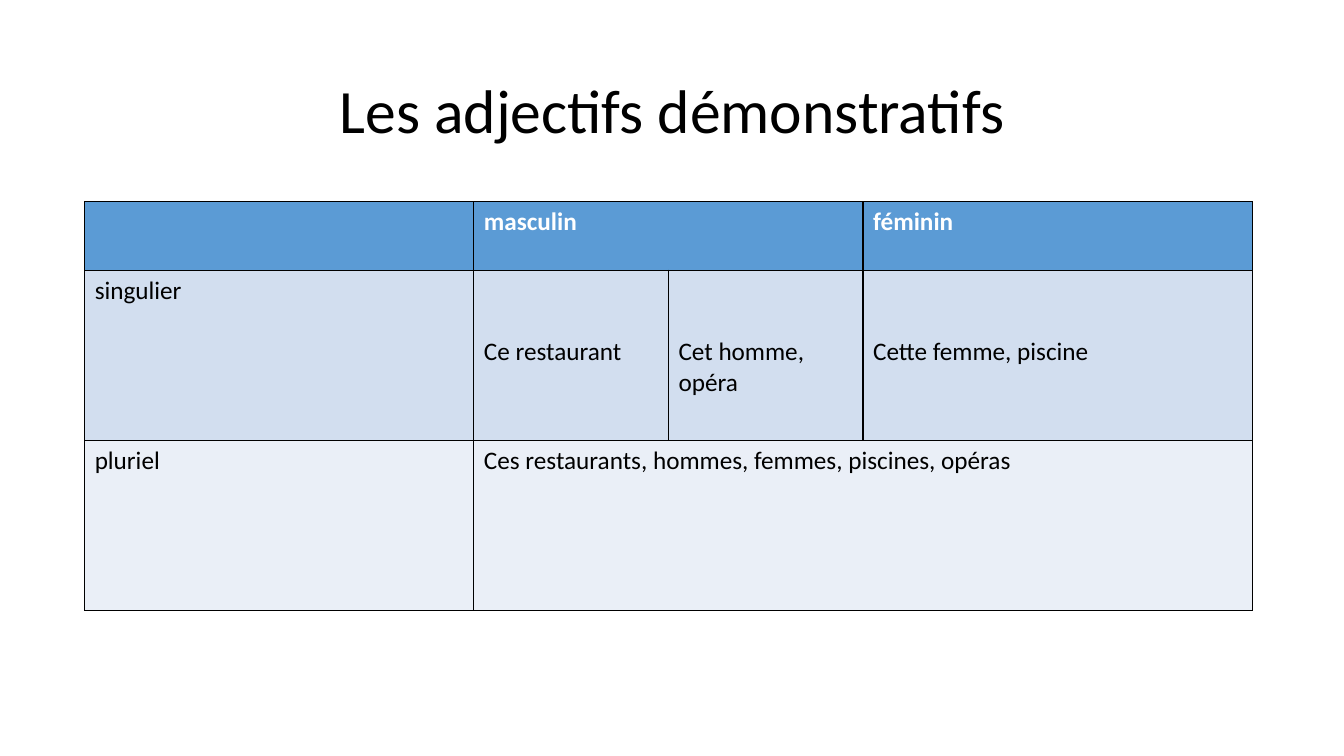
from dataclasses import dataclass

from lxml.etree import SubElement
from pptx import Presentation
from pptx.dml.color import RGBColor
from pptx.enum.text import MSO_ANCHOR, PP_ALIGN
from pptx.oxml.ns import qn
from pptx.util import Inches, Pt


@dataclass(frozen=True)
class Theme:
    font: str = "Calibri"
    title_size: int = 44
    body_size: int = 18
    ink: str = "000000"
    header_ink: str = "FFFFFF"
    row_fills: tuple = ("5B9BD5", "D2DEEF", "EAEFF7")
    border_points: float = 1


class GrammarSlide:
    """Draw themed elements on one slide, with lengths as shares of its size."""

    def __init__(self, deck, theme):
        self.deck = deck
        self.theme = theme
        self.page = deck.slides.add_slide(deck.slide_layouts[6])

    def across(self, share):
        return round(self.deck.slide_width * share / 100)

    def down(self, share):
        return round(self.deck.slide_height * share / 100)

    def frame(self, left, top, width, height):
        return self.across(left), self.down(top), self.across(width), self.down(height)

    def add_span(self, para, text, size, color, bold=False):
        span = para.add_run()
        span.text = text
        span.font.name = self.theme.font
        span.font.size = Pt(size)
        span.font.bold = bold
        span.font.color.rgb = RGBColor.from_string(color)

    def title(self, text, *place):
        box = self.page.shapes.add_textbox(*self.frame(*place))
        box.text_frame.word_wrap = True
        box.text_frame.vertical_anchor = MSO_ANCHOR.MIDDLE
        para = box.text_frame.paragraphs[0]
        para.alignment = PP_ALIGN.CENTER
        para.line_spacing = 0.9
        self.add_span(para, text, self.theme.title_size, self.theme.ink)

    def border(self, cell):
        properties = cell._tc.get_or_add_tcPr()
        for side in ("lnL", "lnR", "lnT", "lnB"):
            line = SubElement(properties, qn(f"a:{side}"), w=str(int(Pt(self.theme.border_points))))
            fill = SubElement(line, qn("a:solidFill"))
            SubElement(fill, qn("a:srgbClr"), val=self.theme.ink)

    def table(self, place, column_shares, row_shares, merges, texts, lowered):
        grid = self.page.shapes.add_table(
            len(row_shares), len(column_shares), *self.frame(*place)).table
        grid.first_row = grid.horz_banding = False
        for column, share in zip(grid.columns, column_shares):
            column.width = self.across(share)
        for row, share in zip(grid.rows, row_shares):
            row.height = self.down(share)
        for row, first, last in merges:
            grid.cell(row, first).merge(grid.cell(row, last))
        for row, fill in enumerate(self.theme.row_fills):
            for column in range(len(column_shares)):
                cell = grid.cell(row, column)
                self.border(cell)
                cell.fill.solid()
                cell.fill.fore_color.rgb = RGBColor.from_string(fill)
        for (row, column), text in texts.items():
            cell = grid.cell(row, column)
            header = row == 0
            color = self.theme.header_ink if header else self.theme.ink
            self.add_span(cell.text_frame.paragraphs[0], text, self.theme.body_size, color, header)
            if (row, column) in lowered:
                cell.margin_top = self.down(8.8)


def main():
    deck = Presentation()
    deck.slide_width, deck.slide_height = Inches(13.33), Inches(7.5)
    slide = GrammarSlide(deck, Theme())
    slide.title("Les adjectifs démonstratifs", 6.9, 5.33, 86.27, 19.33)
    unit = 14.48
    rows = (9.07, 22.53, 22.53)
    slide.table(
        place=(6.3, 26.67, 6 * unit, sum(rows)),
        column_shares=(2 * unit, unit, unit, 2 * unit),
        row_shares=rows,
        merges=((0, 1, 2), (2, 1, 3)),
        texts={
            (0, 1): "masculin",
            (0, 3): "féminin",
            (1, 0): "singulier",
            (1, 1): "Ce restaurant",
            (1, 2): "Cet homme, opéra",
            (1, 3): "Cette femme, piscine",
            (2, 0): "pluriel",
            (2, 1): "Ces restaurants, hommes, femmes, piscines, opéras",
        },
        lowered={(1, 1), (1, 2), (1, 3)},
    )
    deck.save("out.pptx")


if __name__ == "__main__":
    main()
